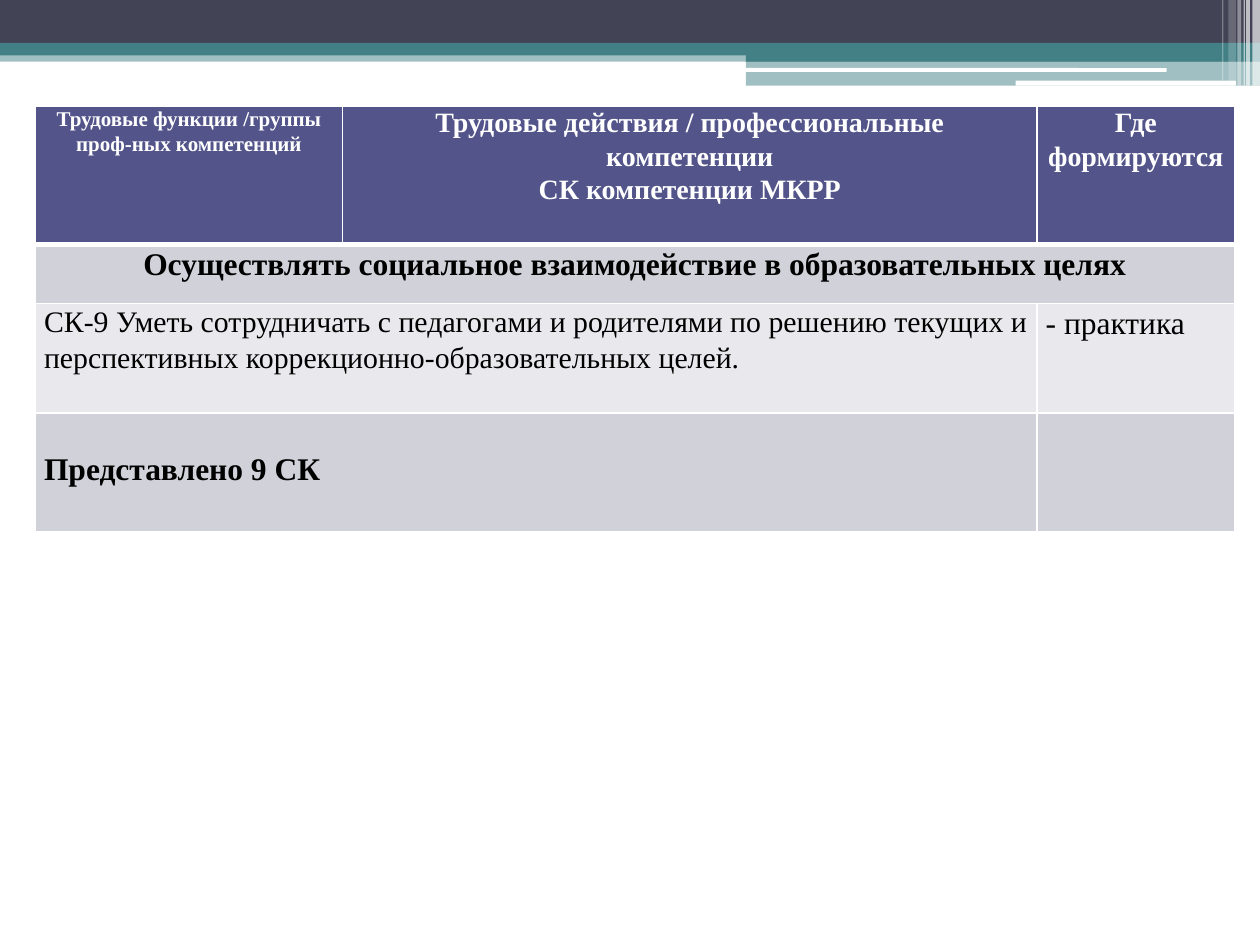
import pptx
import pptx.util
import pptx.dml.color
import pptx.enum.shapes
import pptx.enum.text
import pptx.oxml
import pptx.oxml.ns
import lxml.etree

Inches, Pt = pptx.util.Inches, pptx.util.Pt
RGB = pptx.dml.color.RGBColor
Shape = pptx.enum.shapes.MSO_SHAPE
Align = pptx.enum.text.PP_ALIGN
qn = pptx.oxml.ns.qn

WHITE, BLACK = RGB(255, 255, 255), RGB(0, 0, 0)
SLATE, TEAL = RGB(0x42, 0x44, 0x56), RGB(0x43, 0x80, 0x86)
VIOLET = RGB(0x53, 0x54, 0x8A)
LILAC, PALE = RGB(0xD1, 0xD1, 0xDA), RGB(0xE9, 0xE9, 0xED)
FONT = "Times New Roman"

BANDS = [
    (0, 0.4, 10, 0.09, TEAL, 50),
    (0, 0, 10, 0.34, SLATE, 100),
    (0, 0.34, 10, 0.1, TEAL, 100),
    (5.92, 0.39, 4.08, 0.1, TEAL, 100),
    (5.92, 0.48, 4.08, 0.2, TEAL, 50),
]
PILLS = [(5.91, 0.54, 3.35, 0.03), (8.06, 0.64, 1.75, 0.04)]
STRIPES = [
    (9.94, 0.06, 0.68, 65),
    (9.89, 0.03, 0.68, 65),
    (9.87, 0.01, 0.68, 60),
    (9.82, 0.03, 0.68, 40),
    (9.75, 0.06, 0.64, 20),
    (9.7, 0.01, 0.64, 30),
]

LEFT, TOP = 0.28, 0.84
COLS = [2.44, 5.51, 1.57]
ROWS = [1.1, 0.47, 0.87, 0.94]
FILLS = [VIOLET, LILAC, PALE, LILAC]
MERGES = [(1, 2), (2, 1), (3, 1)]
HEAD = dict(size=16, bold=True, color=WHITE, align=Align.CENTER)
CELLS = [
    (0, 0, ["Трудовые функции /группы", "проф-ных компетенций"], {**HEAD, "size": 12}),
    (0, 1, ["Трудовые действия / профессиональные компетенции",
            "СК компетенции МКРР"], HEAD),
    (0, 2, ["Где формируются"], HEAD),
    (1, 0, ["Осуществлять социальное взаимодействие в образовательных целях"],
     dict(bold=True, align=Align.CENTER)),
    (2, 0, ["СК-9 Уметь сотрудничать с педагогами и родителями по решению "
            "текущих и перспективных коррекционно-образовательных целей."],
     dict(size=17)),
    (2, 2, ["- практика"], dict(align=Align.JUSTIFY)),
    (3, 0, ["Представлено 9 СК"], dict(bold=True, top=0.29)),
]


def write(cell, lines, size=18, bold=False, color=BLACK, align=Align.LEFT, top=0):
    cell.margin_top = Inches(top)
    frame = cell.text_frame
    for i, line in enumerate(lines):
        para = frame.paragraphs[0] if i == 0 else frame.add_paragraph()
        para.alignment = align
        para.line_spacing = 1.07
        run = para.add_run()
        run.text = line
        font = run.font
        font.name, font.size, font.bold = FONT, Pt(size), bold
        font.color.rgb = color


def block(slide, box, color, alpha=100, kind=Shape.RECTANGLE):
    shape = slide.shapes.add_shape(kind, *map(Inches, box))
    shape.shadow.inherit = False
    shape.fill.solid()
    shape.fill.fore_color.rgb = color
    shape.line.fill.background()
    if alpha < 100:
        tint = shape.fill._xPr.find(".//" + qn("a:srgbClr"))
        lxml.etree.SubElement(tint, qn("a:alpha")).set("val", str(alpha * 1000))


def border(cell, base):
    props = cell._tc.get_or_add_tcPr()
    for side in "LRTB":
        width = base if side == "B" else 1
        line = lxml.etree.SubElement(props, qn("a:ln" + side), w=str(Pt(width)))
        fill = lxml.etree.SubElement(line, qn("a:solidFill"))
        lxml.etree.SubElement(fill, qn("a:srgbClr"), val=str(WHITE))


def grid(slide):
    box = (LEFT, TOP, sum(COLS), sum(ROWS))
    table = slide.shapes.add_table(len(ROWS), len(COLS), *map(Inches, box)).table
    for col, width in zip(table.columns, COLS):
        col.width = Inches(width)
    for r, (row, height) in enumerate(zip(table.rows, ROWS)):
        row.height = Inches(height)
        for cell in row.cells:
            border(cell, 3 if r == 0 else 1)
            cell.fill.solid()
            cell.fill.fore_color.rgb = FILLS[r]
            cell.margin_left = cell.margin_right = Inches(0.07)
            cell.margin_top = cell.margin_bottom = 0
    for r, last in MERGES:
        table.cell(r, 0).merge(table.cell(r, last))
    for r, c, lines, style in CELLS:
        write(table.cell(r, c), lines, **style)


def main():
    deck = pptx.Presentation()
    deck.slide_width, deck.slide_height = Inches(10), Inches(7.5)
    slide = deck.slides.add_slide(deck.slide_layouts[6])
    for *box, color, alpha in BANDS:
        block(slide, box, color, alpha)
    for box in PILLS:
        block(slide, box, WHITE, kind=Shape.ROUNDED_RECTANGLE)
    for x, width, height, alpha in STRIPES:
        block(slide, (x, 0, width, height), WHITE, alpha)
    grid(slide)
    deck.save("out.pptx")


if __name__ == "__main__":
    main()
